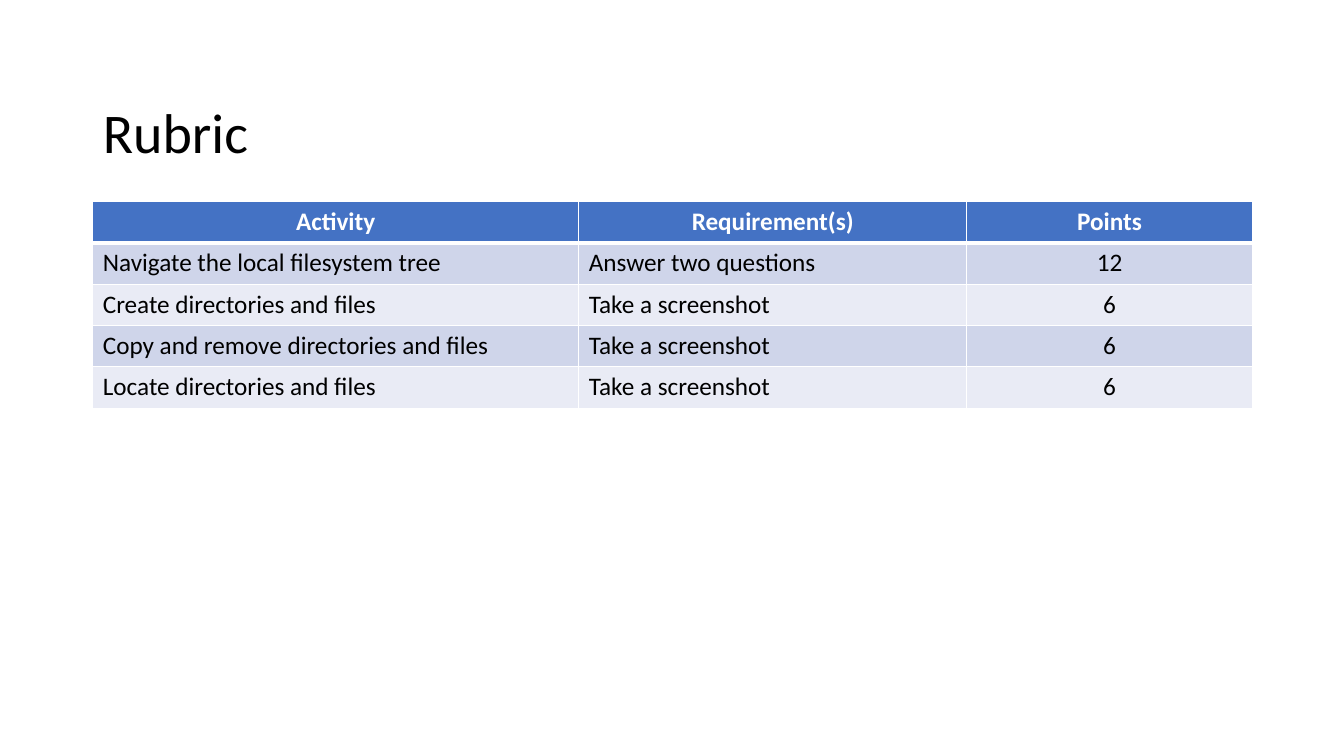
from dataclasses import dataclass

from lxml import etree
from pptx import Presentation
from pptx.dml.color import RGBColor
from pptx.enum.text import MSO_ANCHOR, MSO_AUTO_SIZE, PP_ALIGN
from pptx.oxml.ns import qn
from pptx.slide import Slide
from pptx.table import _Cell
from pptx.text.text import TextFrame
from pptx.util import Inches, Pt

LEFT = PP_ALIGN.LEFT
CENTER = PP_ALIGN.CENTER
MIDDLE = MSO_ANCHOR.MIDDLE
NO_AUTOFIT = MSO_AUTO_SIZE.NONE

FONT = "Calibri"
COLORS = {
    "text": "000000",
    "white": "FFFFFF",
    "header": "4472C4",
    "band_dark": "CFD5EA",
    "band_light": "E9EBF5",
}
TITLE_ONLY_LAYOUT = 5
MARGIN = 0.92
CONTENT_WIDTH = 11.5
TITLE_TOP, TITLE_HEIGHT = 0.83, 1.02
TABLE_TOP, ROW_HEIGHT = 2.0, 0.41
THIN_BORDER, THICK_BORDER = 1, 3


@dataclass(frozen=True)
class Column:
    heading: str
    width: float
    align: PP_ALIGN


@dataclass(frozen=True)
class Criterion:
    activity: str
    requirement: str
    points: int


COLUMNS = [
    Column("Activity", 4.82, LEFT),
    Column("Requirement(s)", 3.85, LEFT),
    Column("Points", 2.83, CENTER),
]
CRITERIA = [
    Criterion("Navigate the local filesystem tree", "Answer two questions", 12),
    Criterion("Create directories and files", "Take a screenshot", 6),
    Criterion("Copy and remove directories and files", "Take a screenshot", 6),
    Criterion("Locate directories and files", "Take a screenshot", 6),
]


def write_text(
    frame: TextFrame,
    text: str,
    *,
    size: float = 18,
    color: str = "text",
    bold: bool = False,
    align: PP_ALIGN = LEFT,
    line_spacing: float = 1.0,
) -> None:
    paragraph = frame.paragraphs[0]
    paragraph.alignment = align
    paragraph.line_spacing = line_spacing
    run = paragraph.add_run()
    run.text = text
    run.font.name = FONT
    run.font.size = Pt(size)
    run.font.bold = bold
    run.font.color.rgb = RGBColor.from_string(COLORS[color])


def set_borders(cell: _Cell, *, top: float, bottom: float) -> None:
    properties = cell._tc.get_or_add_tcPr()
    widths = {"lnL": THIN_BORDER, "lnR": THIN_BORDER, "lnT": top, "lnB": bottom}
    for side, width in widths.items():
        line = etree.SubElement(properties, qn(f"a:{side}"), w=str(Pt(width)))
        fill = etree.SubElement(line, qn("a:solidFill"))
        etree.SubElement(fill, qn("a:srgbClr"), val=COLORS["white"])


def add_title(slide: Slide, text: str) -> None:
    title = slide.shapes.title
    title.left, title.top = Inches(MARGIN), Inches(TITLE_TOP)
    title.width, title.height = Inches(CONTENT_WIDTH), Inches(TITLE_HEIGHT)
    title.text_frame.auto_size = NO_AUTOFIT
    title.text_frame.vertical_anchor = MIDDLE
    write_text(title.text_frame, text, size=40, line_spacing=0.9)


def add_rubric(slide: Slide, columns: list[Column], criteria: list[Criterion]) -> None:
    rows = [[column.heading for column in columns]]
    rows += [[item.activity, item.requirement, str(item.points)] for item in criteria]
    table = slide.shapes.add_table(
        len(rows),
        len(columns),
        Inches(MARGIN),
        Inches(TABLE_TOP),
        Inches(CONTENT_WIDTH),
        Inches(ROW_HEIGHT * len(rows)),
    ).table
    for index, column in enumerate(columns):
        table.columns[index].width = Inches(column.width)
    for row_index, values in enumerate(rows):
        table.rows[row_index].height = Inches(ROW_HEIGHT)
        is_header = row_index == 0
        band = "band_dark" if row_index % 2 else "band_light"
        for column_index, (column, value) in enumerate(zip(columns, values)):
            cell = table.cell(row_index, column_index)
            set_borders(
                cell,
                top=THICK_BORDER if row_index == 1 else THIN_BORDER,
                bottom=THICK_BORDER if is_header else THIN_BORDER,
            )
            cell.fill.solid()
            fill_name = "header" if is_header else band
            cell.fill.fore_color.rgb = RGBColor.from_string(COLORS[fill_name])
            write_text(
                cell.text_frame,
                value,
                color="white" if is_header else "text",
                bold=is_header,
                align=CENTER if is_header else column.align,
            )


def main() -> None:
    presentation = Presentation()
    presentation.slide_width = Inches(13.33)
    presentation.slide_height = Inches(7.5)
    slide = presentation.slides.add_slide(presentation.slide_layouts[TITLE_ONLY_LAYOUT])
    add_title(slide, "Rubric")
    add_rubric(slide, COLUMNS, CRITERIA)
    presentation.save("out.pptx")


if __name__ == "__main__":
    main()
